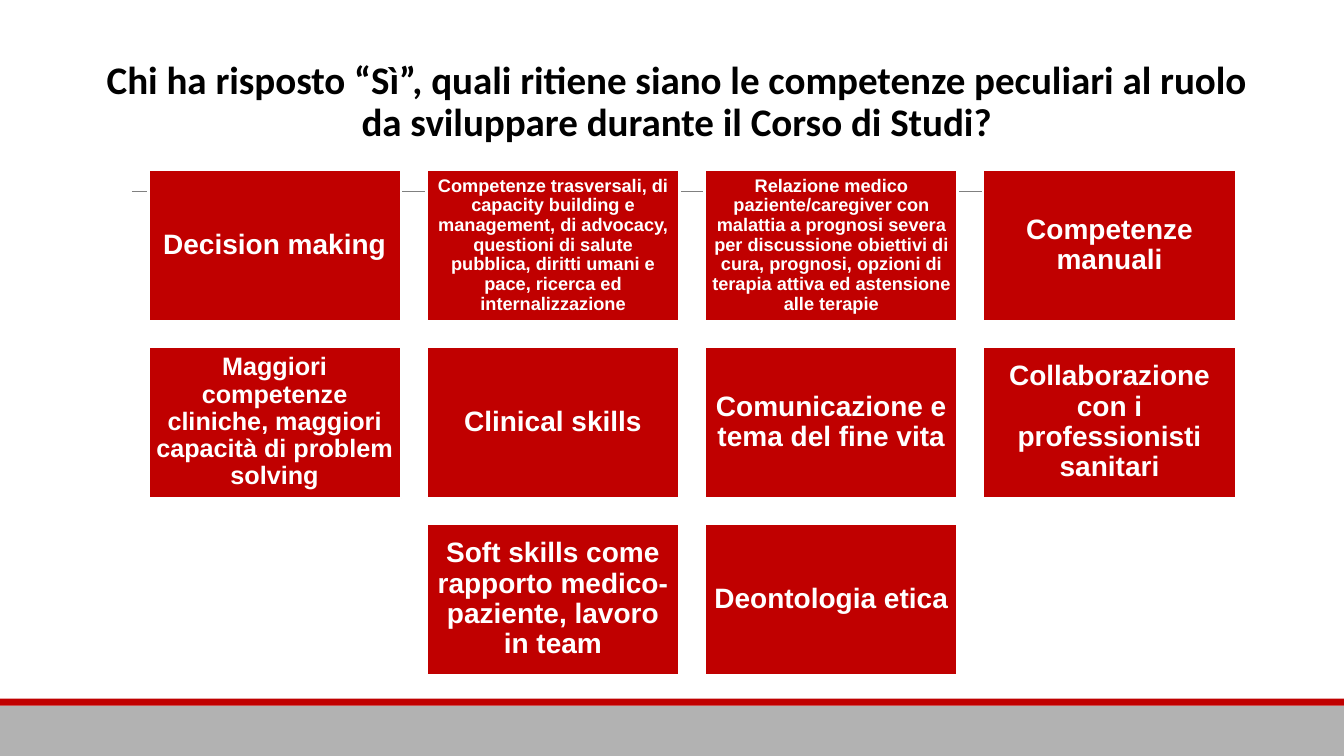
"""Build the slide on the skills to develop during the degree course."""
from dataclasses import dataclass

from lxml import etree
from pptx import Presentation
from pptx.dml.color import RGBColor
from pptx.enum.shapes import MSO_CONNECTOR, MSO_SHAPE
from pptx.enum.text import MSO_ANCHOR, PP_ALIGN
from pptx.oxml.ns import qn
from pptx.util import Pt

RECT = MSO_SHAPE.RECTANGLE
LINE = MSO_CONNECTOR.STRAIGHT
TOP, MIDDLE = MSO_ANCHOR.TOP, MSO_ANCHOR.MIDDLE
CENTER = PP_ALIGN.CENTER

WIDE, HIGH = 960, 540
RED, GRAY, RULE, WHITE, BLACK = "C00000", "B2B2B2", "808080", "FFFFFF", "000000"
COLS = 4
LEFT, UPPER = 105.8, 121
CARD_W, CARD_H = 180.7, 108.4
STEP_X, STEP_Y = 198.8, 126.4
INSET = 0.3

TITLE = ("Chi ha risposto “Sì”, quali ritiene siano le competenze peculiari "
         "al ruolo da sviluppare durante il Corso di Studi?")


@dataclass
class Box:
    x: float
    y: float
    w: float
    h: float


@dataclass
class Band:
    box: Box
    fill: str


@dataclass
class Card:
    text: str
    size: float = 20


BANDS = [
    Band(Box(0, 504, WIDE, 36), GRAY),
    Band(Box(0, 499, WIDE, 5), RED),
]

ROWS = [
    [
        Card("Decision making"),
        Card("Competenze trasversali, di capacity building e management, di advocacy, "
             "questioni di salute pubblica, diritti umani e pace, ricerca ed "
             "internalizzazione", 13),
        Card("Relazione medico paziente/caregiver con malattia a prognosi severa per "
             "discussione obiettivi di cura, prognosi, opzioni di terapia attiva ed "
             "astensione alle terapie", 13),
        Card("Competenze manuali"),
    ],
    [
        Card("Maggiori competenze cliniche, maggiori capacità di problem solving", 18),
        Card("Clinical skills"),
        Card("Comunicazione e tema del fine vita"),
        Card("Collaborazione con i professionisti sanitari"),
    ],
    [
        Card("Soft skills come rapporto medico-paziente, lavoro in team"),
        Card("Deontologia etica"),
    ],
]


def color(code: str) -> RGBColor:
    """Turn a hex string into a colour."""
    return RGBColor.from_string(code)


def place(box: Box) -> list[Pt]:
    """Give the left, top, width and height of a box as lengths."""
    return [Pt(v) for v in (box.x, box.y, box.w, box.h)]


def assign(target, values: dict) -> None:
    """Set each named attribute on the target."""
    for name, value in values.items():
        setattr(target, name, value)


def write(shape, text: str, font: str, size: float, ink: str, pad: float, anchor) -> None:
    """Put bold, centred, wrapped text in a shape."""
    frame = shape.text_frame
    sides = ("left", "top", "right", "bottom")
    assign(frame, {f"margin_{side}": Pt(pad) for side in sides})
    assign(frame, {"word_wrap": True, "vertical_anchor": anchor})
    para = frame.paragraphs[0]
    assign(para, {"alignment": CENTER, "line_spacing": 0.9})
    run = para.add_run()
    run.text = text
    assign(run.font, {"name": font, "size": Pt(size), "bold": True})
    run.font.color.rgb = color(ink)


def draw_rect(shapes, box: Box, fill: str):
    """Add a plain filled rectangle without outline or shadow."""
    rect = shapes.add_shape(RECT, *place(box))
    rect.shadow.inherit = False
    rect.fill.solid()
    rect.fill.fore_color.rgb = color(fill)
    rect.line.fill.background()
    return rect


def draw_rule(shapes, start: float, end: float, y: float) -> None:
    """Add the thin level line behind the cards."""
    rule = shapes.add_connector(LINE, Pt(start), Pt(y), Pt(end), Pt(y))
    rule.line.color.rgb = color(RULE)
    rule.line.width = Pt(0.5)
    etree.SubElement(rule.element.spPr, qn("a:effectLst"))


def draw_card(shapes, card: Card, col: float, row: int) -> None:
    """Add one red card at its place in the grid."""
    box = Box(LEFT + col * STEP_X, UPPER + row * STEP_Y, CARD_W, CARD_H)
    rect = draw_rect(shapes, box, RED)
    rect.line.color.rgb = color(WHITE)
    rect.line.width = Pt(2)
    write(rect, card.text, "Arial", card.size, WHITE, card.size * INSET, MIDDLE)


def main() -> None:
    """Draw the slide and save it."""
    deck = Presentation()
    assign(deck, {"slide_width": Pt(WIDE), "slide_height": Pt(HIGH)})
    shapes = deck.slides.add_slide(deck.slide_layouts[6]).shapes
    for band in BANDS:
        draw_rect(shapes, band.box, band.fill)
    draw_rule(shapes, 94.3, 879, 136.8)
    title = shapes.add_textbox(*place(Box(68.4, 43.2, 830, 90)))
    write(title, TITLE, "Calibri", 27.9, BLACK, 0, TOP)
    for row, cards in enumerate(ROWS):
        first = (COLS - len(cards)) / 2
        for i, card in enumerate(cards):
            draw_card(shapes, card, first + i, row)
    deck.save("out.pptx")


if __name__ == "__main__":
    main()
